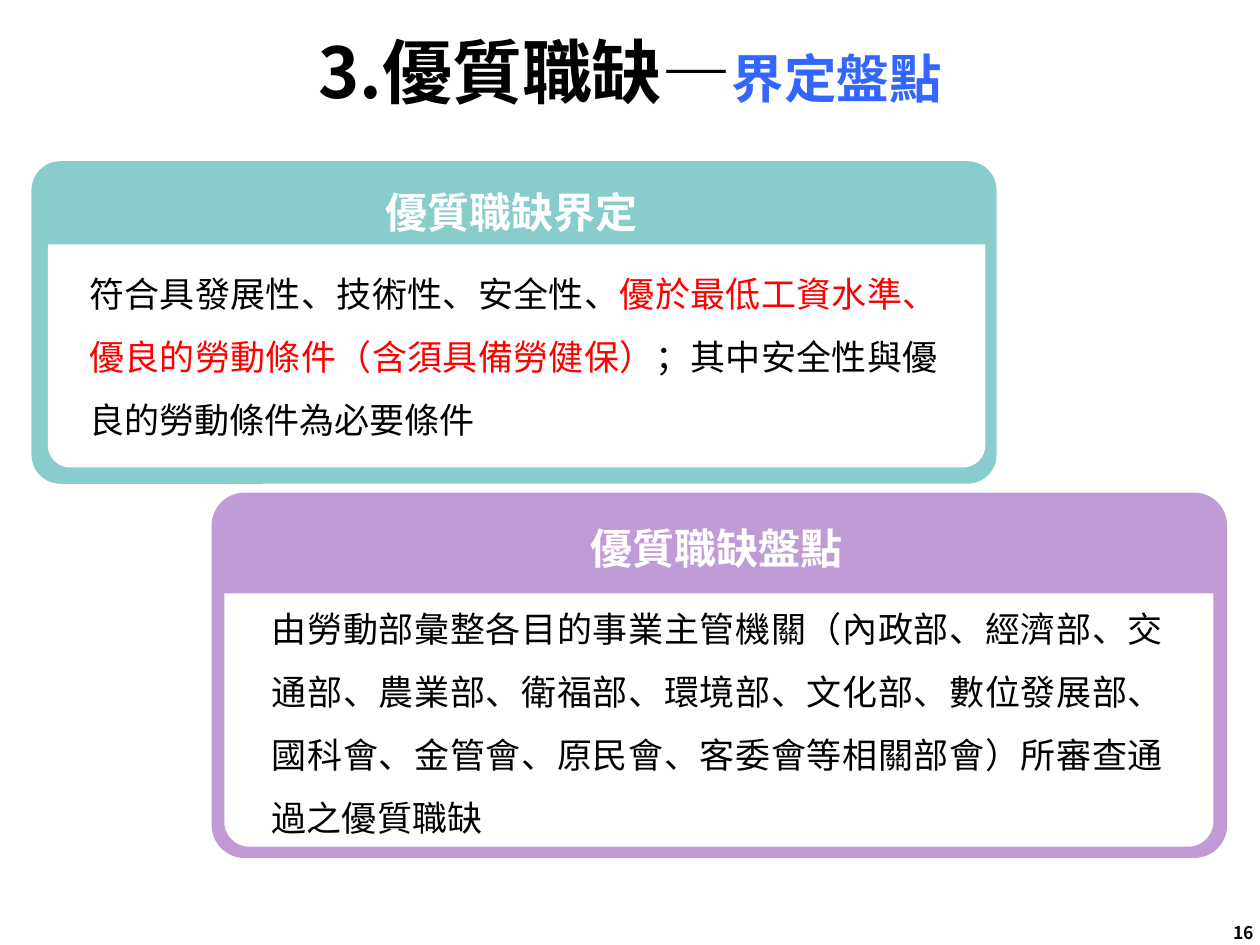
"""Builds a slide with two framed cards that define and list quality job openings."""
import pptx
import pptx.util
import pptx.dml.color
import pptx.enum.shapes
import pptx.enum.text
import pptx.oxml
import pptx.oxml.ns
from lxml import etree

Inches = pptx.util.Inches
Shape = pptx.enum.shapes.MSO_SHAPE
Align = pptx.enum.text.PP_ALIGN
Anchor = pptx.enum.text.MSO_ANCHOR
qn = pptx.oxml.ns.qn
FONT = "Noto Sans CJK SC"
BLACK, WHITE, RED, BLUE = "000000", "FFFFFF", "FF0000", "3366FF"

TITLE = [("3.優質職缺—", BLACK, 40), ("界定盤點", BLUE, 30)]
CARDS = [
    {
        "head": "優質職缺盤點",
        "body": [("由勞動部彙整各目的事業主管機關（內政部、經濟部、交通部、農業部、衛福部、"
                  "環境部、文化部、數位發展部、國科會、金管會、原民會、客委會等相關部會）"
                  "所審查通過之優質職缺", BLACK, 20)],
        "color": "8239AD",
        "frame": (1.68, 3.91, 8.06, 2.9),
        "panel": (1.78, 4.71, 7.85, 2.01),
        "label": (3.16, 4.02, 5.05, 0.58),
        "text": (2.06, 4.65, 7.27, 2.01),
    },
    {
        "head": "優質職缺界定",
        "body": [("符合具發展性、技術性、安全性、", BLACK, 20),
                 ("優於最低工資水準、優良的勞動條件（含須具備勞健保）", RED, 20),
                 ("；其中安全性與優良的勞動條件為必要條件", BLACK, 20)],
        "color": "139B9B",
        "frame": (0.25, 1.28, 7.66, 2.56),
        "panel": (0.38, 1.94, 7.44, 1.77),
        "label": (1.66, 1.35, 4.8, 0.51),
        "text": (0.61, 1.86, 6.93, 1.77),
    },
]


def rgb(code):
    return pptx.dml.color.RGBColor.from_string(code)


def place(shape, box):
    shape.left, shape.top, shape.width, shape.height = map(Inches, box)


def write(shape, runs, align=Align.CENTER, anchor=Anchor.MIDDLE, space=1.0, bold=False):
    frame = shape.text_frame
    frame.word_wrap = True
    frame.auto_size = pptx.enum.text.MSO_AUTO_SIZE.NONE
    frame.vertical_anchor = anchor
    para = frame.paragraphs[0]
    para.alignment, para.line_spacing = align, space
    for words, color, size in runs:
        run = para.add_run()
        run.text = words
        font = run.font
        font.name, font.size, font.bold = FONT, pptx.util.Pt(size), bold
        font.color.rgb = rgb(color)
        east = etree.SubElement(run._r.get_or_add_rPr(), qn("a:ea"))
        east.set("typeface", FONT)


def label(slide, box, runs, **style):
    write(slide.shapes.add_textbox(*map(Inches, box)), runs, **style)


def block(slide, kind, box, color, adjust, alpha=None):
    shape = slide.shapes.add_shape(kind, *map(Inches, box))
    shape.shadow.inherit = False
    shape.line.fill.background()
    shape.fill.solid()
    shape.fill.fore_color.rgb = rgb(color)
    for index, value in enumerate(adjust):
        shape.adjustments[index] = value
    if alpha:
        tint = shape._element.spPr.find(qn("a:solidFill"))[0]
        etree.SubElement(tint, qn("a:alpha")).set("val", str(alpha * 1000))


def card(slide, item):
    block(slide, Shape.ROUNDED_RECTANGLE, item["frame"], item["color"], [0.09], alpha=50)
    block(slide, Shape.ROUND_2_SAME_RECTANGLE, item["panel"], WHITE, [0, 0.1])
    label(slide, item["label"], [(item["head"], WHITE, 24)],
          anchor=Anchor.TOP, space=1.2, bold=True)
    label(slide, item["text"], item["body"], align=Align.JUSTIFY, space=1.5)


def main():
    deck = pptx.Presentation()
    deck.slide_width, deck.slide_height = Inches(10), Inches(7.5)
    slide = deck.slides.add_slide(deck.slide_layouts[5])
    title = slide.shapes.title
    place(title, (0.69, 0.15, 8.62, 0.91))
    write(title, TITLE, space=0.9, bold=True)
    label(slide, (7.8, 7.2, 2.25, 0.4), [("16", BLACK, 10)], align=Align.RIGHT, bold=True)
    for item in CARDS:
        card(slide, item)
    deck.save("out.pptx")


if __name__ == "__main__":
    main()
